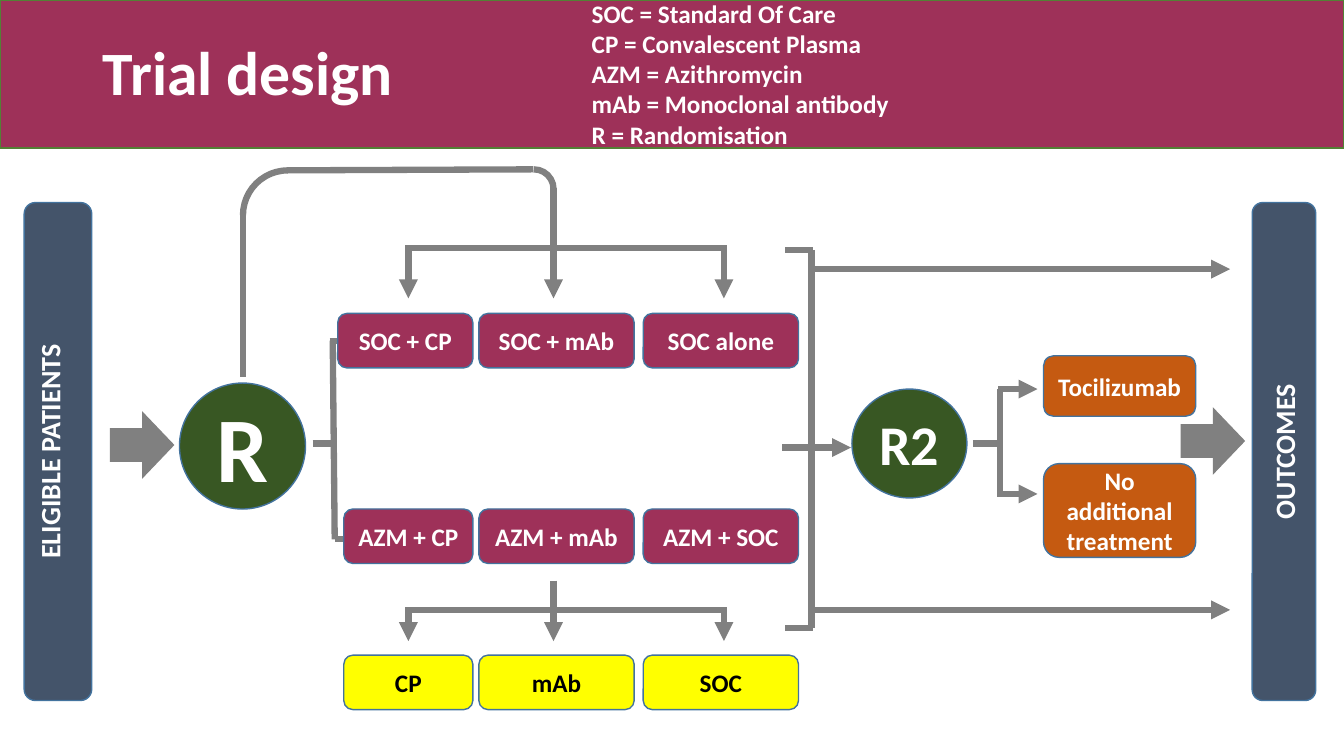
from lxml.etree import SubElement
from pptx import Presentation
from pptx.dml.color import RGBColor
from pptx.enum.shapes import MSO_CONNECTOR, MSO_SHAPE
from pptx.enum.text import MSO_ANCHOR, PP_ALIGN
from pptx.oxml.ns import qn
from pptx.util import Inches, Pt

COLORS = {"plum": "9E3159", "green": "385723", "slate": "44546A",
          "orange": "C55A11", "yellow": "FFFF00", "grey": "808080",
          "outline": "43739E", "banner line": "538035",
          "white": "FFFFFF", "black": "000000"}


def rgb(name):
    return RGBColor.from_string(COLORS[name])


def add_text(p, text, size, color="white"):
    r = p.add_run()
    r.text = text
    r.font.name = "Calibri"
    r.font.size = Pt(size)
    r.font.bold = True
    r.font.color.rgb = rgb(color)


def add_block(s, kind, x, y, w, h, fill, line="outline"):
    sp = s.shapes.add_shape(kind, Inches(x), Inches(y), Inches(w), Inches(h))
    sp.shadow.inherit = False
    if fill:
        sp.fill.solid()
        sp.fill.fore_color.rgb = rgb(fill)
    else:
        sp.fill.background()
    if line:
        sp.line.color.rgb = rgb(line)
        sp.line.width = Pt(1)
    else:
        sp.line.fill.background()
    return sp


def add_label(s, kind, x, y, w, h, fill, text, size=18, color="white"):
    sp = add_block(s, kind, x, y, w, h, fill)
    tf = sp.text_frame
    tf.word_wrap = True
    tf.vertical_anchor = MSO_ANCHOR.MIDDLE
    p = tf.paragraphs[0]
    p.alignment = PP_ALIGN.CENTER
    add_text(p, text, size, color)
    return sp


def add_line(s, x1, y1, x2, y2, arrow=False):
    c = s.shapes.add_connector(MSO_CONNECTOR.STRAIGHT, Inches(x1), Inches(y1),
                               Inches(x2), Inches(y2))
    c.line.color.rgb = rgb("grey")
    c.line.width = Pt(4.5)
    if arrow:
        SubElement(c.line._get_or_add_ln(), qn("a:tailEnd"), type="triangle")
    SubElement(c.element.spPr, qn("a:effectLst"))


def add_arc(s, x, y, size, rotation=0):
    sp = add_block(s, MSO_SHAPE.ARC, x, y, size, size, None, "grey")
    sp.line.width = Pt(4.5)
    sp.rotation = rotation


def header(s, x, y, w, h):
    title = s.shapes.title
    banner = add_block(s, MSO_SHAPE.RECTANGLE, x, y, w, h, "plum", "banner line")
    title.element.addprevious(banner.element)

    title.left, title.top = Inches(x + 0.92), Inches(y + 0.02)
    title.width, title.height = Inches(8.85), Inches(h - 0.02)
    tf = title.text_frame
    tf.vertical_anchor = MSO_ANCHOR.MIDDLE
    p = tf.paragraphs[0]
    p.alignment = PP_ALIGN.LEFT
    p.line_spacing = 0.9
    add_text(p, "Trial design", 44)

    # Abbreviations
    tf = s.shapes.add_textbox(Inches(x + 5.77), Inches(y - 0.07),
                              Inches(3.42), Inches(1.62)).text_frame
    tf.word_wrap = True
    entries = ["SOC = Standard Of Care", "CP = Convalescent Plasma",
               "AZM = Azithromycin", "mAb = Monoclonal antibody",
               "R = Randomisation"]
    for i, entry in enumerate(entries):
        p = tf.add_paragraph() if i else tf.paragraphs[0]
        add_text(p, entry, 18)


def side_bar(s, x, y, w, h, text, anchor):
    sp = add_label(s, MSO_SHAPE.ROUNDED_RECTANGLE, x, y, w, h, "slate", text, 20)
    sp.text_frame.vertical_anchor = anchor
    sp.text_frame._txBody.bodyPr.set("vert", "vert270")


def block_arrow(s, x, y):
    add_block(s, MSO_SHAPE.RIGHT_ARROW, x, y, 0.64, 0.67, "grey", None)


def first_randomisation(s, x, y):
    add_label(s, MSO_SHAPE.OVAL, x, y, 1.25, 1.25, "green", "R", 66)
    # Bracket to the two rows of arms
    add_line(s, x + 1.52, y - 0.42, x + 1.54, y + 1.55)
    add_line(s, x + 1.54, y + 1.55, x + 1.92, y + 1.55, True)
    add_line(s, x + 1.49, y - 0.42, x + 1.88, y - 0.42, True)
    add_line(s, x + 1.32, y + 0.6, x + 1.52, y + 0.6)
    # Curved route to the upper fan
    add_line(s, x + 0.63, y - 0.06, x + 0.63, y - 1.67)
    add_arc(s, x + 0.63, y - 2.11, 0.89, 270)
    add_line(s, x + 1.07, y - 2.11, x + 3.51, y - 2.12)
    add_arc(s, x + 3.32, y - 2.12, 0.39)


def fan(s, x, y, stem, drop):
    add_line(s, x, y, x + 3.19, y)
    add_line(s, x + 1.47, y - stem, x + 1.47, y + drop, True)
    for dx in (0.03, 3.16):
        add_line(s, x + dx, y, x + dx, y + drop, True)


def arms(s, x, y):
    fan(s, x + 0.67, y - 0.65, 0.59, 0.5)
    fan(s, x + 0.67, y + 2.94, 0.29, 0.31)
    rows = [(0, 0, "plum", "white", ["SOC + CP", "SOC + mAb", "SOC alone"]),
            (1.94, 0.06, "plum", "white", ["AZM + CP", "AZM + mAb", "AZM + SOC"]),
            (3.39, 0.06, "yellow", "black", ["CP", "mAb", "SOC"])]
    for dy, inset, fill, color, names in rows:
        columns = [(inset, 1.34 - inset), (1.4, 1.54), (3.03, 1.54)]
        for (dx, w), name in zip(columns, names):
            add_label(s, MSO_SHAPE.ROUNDED_RECTANGLE, x + dx, y + dy, w, 0.54,
                      fill, name, color=color)


def collector(s, x, y, h):
    # Bracket that gathers all arms, with routes onward
    add_line(s, x, y, x, y + h)
    for dy in (0, h):
        add_line(s, x - 0.26, y + dy, x + 0.01, y + dy)
    for dy in (0.19, h - 0.18):
        add_line(s, x, y + dy, x + 4.15, y + dy, True)
    add_line(s, x - 0.29, y + 1.96, x + 0.39, y + 1.96, True)


def second_randomisation(s, x, y):
    add_label(s, MSO_SHAPE.OVAL, x, y, 1.14, 1.08, "green", "R2", 40)
    add_line(s, x + 1.2, y + 0.54, x + 1.47, y + 0.54)
    add_line(s, x + 1.47, y, x + 1.47, y + 1.07)
    options = [(0, -0.33, 0.6, "Tocilizumab"),
               (1.04, 0.74, 0.93, "No additional treatment")]
    for arrow_dy, dy, h, name in options:
        add_line(s, x + 1.45, y + arrow_dy, x + 1.84, y + arrow_dy, True)
        add_label(s, MSO_SHAPE.ROUNDED_RECTANGLE, x + 1.9, y + dy, 1.51, h,
                  "orange", name)


def main():
    prs = Presentation()
    prs.slide_width, prs.slide_height = Inches(13.33), Inches(7.5)
    s = prs.slides.add_slide(prs.slide_layouts[5])
    header(s, 0, 0, 13.33, 1.47)
    side_bar(s, 0.24, 2.01, 0.67, 4.94, "ELIGIBLE PATIENTS", MSO_ANCHOR.TOP)
    side_bar(s, 12.42, 2.01, 0.63, 4.94, "OUTCOMES", MSO_ANCHOR.MIDDLE)
    block_arrow(s, 1.09, 4.08)
    block_arrow(s, 11.71, 4.04)
    first_randomisation(s, 1.78, 3.8)
    arms(s, 3.35, 3.11)
    collector(s, 8.05, 2.48, 3.75)
    second_randomisation(s, 8.45, 3.86)
    prs.save("out.pptx")


if __name__ == "__main__":
    main()
